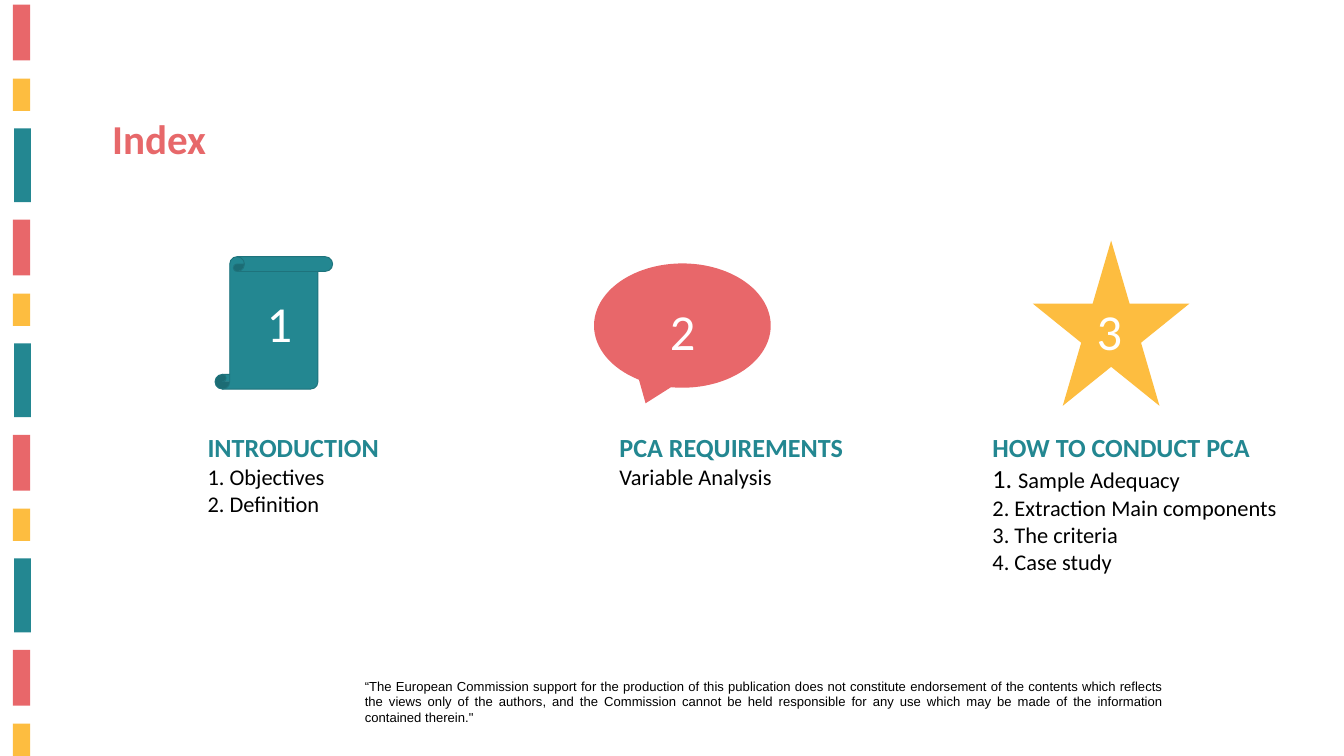
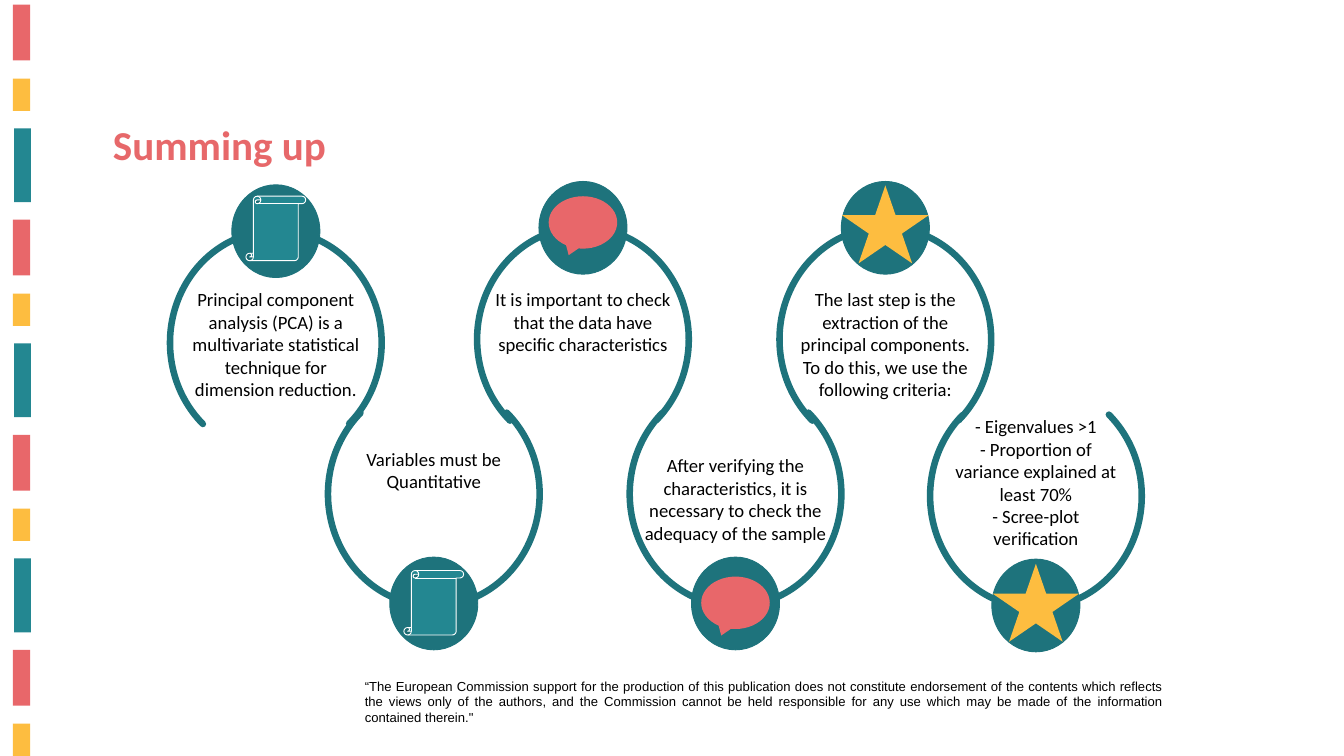
"""Build the index and summary slides of a course on principal component analysis."""
from dataclasses import dataclass
from typing import Optional

from pptx import Presentation
from pptx.dml.color import RGBColor
from pptx.enum.shapes import MSO_SHAPE as Preset
from pptx.enum.text import MSO_ANCHOR as Anchor, MSO_AUTO_SIZE as AutoSize, PP_ALIGN as Align
from pptx.oxml.ns import qn
from pptx.util import Inches, Pt

WIDTH, HEIGHT = 20, 11.25
CORAL, AMBER, TEAL, DEEP_TEAL = "E8676A", "FDBD40", "238791", "1E737C"
TITLE_CORAL, BLACK, WHITE = "E7686A", "000000", "FFFFFF"
BAND_PERIOD = 3.2
RING_WIDTH, RING_HEIGHT = 3.15, 3.34
MEDALLION_WIDTH, MEDALLION_HEIGHT = 1.31, 1.38
DISCLAIMER = (
    "“The European Commission support for the production of this publication does not "
    "constitute endorsement of the contents which reflects the views only of the authors, "
    "and the Commission cannot be held responsible for any use which may be made of the "
    "information contained therein.\""
)


@dataclass(frozen=True)
class Box:
    left: float
    top: float
    width: float
    height: float

    def lengths(self) -> tuple:
        return tuple(Inches(v) for v in (self.left, self.top, self.width, self.height))


@dataclass(frozen=True)
class Band:
    box: Box
    color: str


@dataclass(frozen=True)
class Icon:
    preset: Preset
    color: str
    width: float
    height: float
    outline: Optional[str] = None


@dataclass(frozen=True)
class Topic:
    icon: Icon
    icon_box: Box
    outline: Optional[str]
    number_box: Box
    text_box: Box
    heading: str
    items: tuple


@dataclass(frozen=True)
class Step:
    icon: Icon
    left: float
    top: float
    upper: bool
    icon_top: float
    text_top: float
    text_width: float
    text_height: float
    lines: tuple


BANDS = (
    Band(Box(0.19, 0.07, 0.26, 0.83), CORAL),
    Band(Box(0.19, 1.17, 0.26, 0.48), AMBER),
    Band(Box(0.21, 1.91, 0.25, 1.1), TEAL),
)
SCROLL = Icon(Preset.VERTICAL_SCROLL, TEAL, 0.89, 0.96, WHITE)
SPEECH = Icon(Preset.OVAL_CALLOUT, CORAL, 1.02, 0.78)
STAR = Icon(Preset.STAR_5_POINT, AMBER, 1.29, 1.16)

TOPICS = (
    Topic(SCROLL, Box(3.2, 3.82, 1.75, 1.97), DEEP_TEAL, Box(3.87, 4.3, 1.58, 1.01),
          Box(2.99, 6.37, 3.42, 2.32), "INTRODUCTION", ("1. Objectives", "2. Definition")),
    Topic(SPEECH, Box(8.84, 3.92, 2.63, 1.85), None, Box(9.87, 4.41, 1.08, 1.01),
          Box(9.12, 6.37, 4.21, 1.38), "PCA REQUIREMENTS", ("Variable Analysis",)),
    Topic(STAR, Box(15.37, 3.58, 2.33, 2.46), None, Box(16.22, 4.41, 1.5, 1.01),
          Box(14.67, 6.37, 4.55, 2.49), "HOW TO CONDUCT PCA",
          ("1. Sample Adequacy", "2. Extraction Main components",
           "3. The criteria", "4. Case study")),
)
STEPS = (
    Step(SCROLL, 2.53, 3.43, True, 2.92, 4.24, 2.9, 1.78,
         ("Principal component analysis (PCA) is a multivariate statistical technique "
          "for dimension reduction.",)),
    Step(SCROLL, 4.88, 5.68, False, 8.49, 6.61, 3.08, 0.77,
         ("Variables must be Quantitative",)),
    Step(SPEECH, 7.1, 3.38, True, 2.92, 4.24, 3.08, 1.11,
         ("It is important to check that the data have specific characteristics",)),
    Step(SPEECH, 9.37, 5.68, False, 8.58, 6.71, 2.9, 1.45,
         ("After verifying the characteristics, it is necessary to check the adequacy "
          "of the sample",)),
    Step(STAR, 11.6, 3.38, True, 2.76, 4.24, 2.75, 1.78,
         ("The last step is the extraction of the principal components. To do this, "
          "we use the following criteria:",)),
    Step(STAR, 13.84, 5.71, False, 8.39, 6.13, 2.75, 2.12,
         ("- Eigenvalues >1", "- Proportion of variance explained at least 70%",
          "- Scree-plot verification")),
)


def rgb(color: str) -> RGBColor:
    return RGBColor.from_string(color)


def style_run(run, size: float, color: str, bold: bool = False, font: str = "Calibri") -> None:
    run.font.name, run.font.size, run.font.bold = font, Pt(size), bold
    run.font.color.rgb = rgb(color)


def prepare_frame(frame) -> None:
    frame.word_wrap, frame.auto_size = True, AutoSize.NONE
    frame.vertical_anchor = Anchor.TOP
    frame.margin_left = frame.margin_right = Inches(0.1)
    frame.margin_top = frame.margin_bottom = Inches(0.05)


def add_text(slide, box: Box, lines: tuple, size: float, color: str = BLACK,
             align: Align = Align.LEFT, font: str = "Calibri"):
    frame = slide.shapes.add_textbox(*box.lengths()).text_frame
    prepare_frame(frame)
    frame.text = "\n".join(lines)
    for paragraph in frame.paragraphs:
        paragraph.alignment = align
        for run in paragraph.runs:
            style_run(run, size, color, font=font)
    return frame


def add_preset(slide, preset: Preset, box: Box, fill: Optional[str],
               outline: Optional[str] = None, weight: float = 1):
    shape = slide.shapes.add_shape(preset, *box.lengths())
    shape.shadow.inherit = False
    if fill:
        shape.fill.solid()
        shape.fill.fore_color.rgb = rgb(fill)
    else:
        shape.fill.background()
    if outline:
        shape.line.color.rgb = rgb(outline)
        shape.line.width = Pt(weight)
    else:
        shape.line.fill.background()
    return shape


def set_title(slide, text: str, box: Box) -> None:
    title = slide.shapes.title
    title.left, title.top, title.width, title.height = box.lengths()
    prepare_frame(title.text_frame)
    title.text_frame.text = text
    paragraph = title.text_frame.paragraphs[0]
    paragraph.alignment = Align.LEFT
    style_run(paragraph.runs[0], 44, TITLE_CORAL, bold=True)


def decorate_layout(layout, slide) -> None:
    for placeholder in list(layout.placeholders):
        if placeholder.placeholder_format.idx:
            layout.shapes.element.remove(placeholder.element)
    for cycle in range(4):
        for band in BANDS:
            top = band.box.top + cycle * BAND_PERIOD
            if top < HEIGHT:
                height = min(band.box.height, HEIGHT - top)
                add_preset(slide, Preset.RECTANGLE,
                           Box(band.box.left, top, band.box.width, height), band.color)
    add_text(slide, Box(5.33, 10.04, 12.08, 0.81), (DISCLAIMER,), 14,
             align=Align.JUSTIFY, font="Arial")
    for shape in list(slide.shapes):
        if not shape.is_placeholder:
            layout.shapes.element.append(shape.element)


def draw_topic(slide, number: int, topic: Topic) -> None:
    add_preset(slide, topic.icon.preset, topic.icon_box, topic.icon.color, topic.outline)
    add_text(slide, topic.number_box, (str(number),), 54, WHITE)
    frame = add_text(slide, topic.text_box, (topic.heading, *topic.items), 24)
    style_run(frame.paragraphs[0].runs[0], 28, TEAL, bold=True)
    if topic.icon is STAR:
        first_item = frame.paragraphs[1]
        marker, label = topic.items[0].split(" ", 1)
        first_item.runs[0].text = marker + " "
        style_run(first_item.runs[0], 28, BLACK)
        label_run = first_item.add_run()
        label_run.text = label
        style_run(label_run, 24, BLACK)


def draw_step(slide, step: Step) -> None:
    center = step.left + RING_WIDTH / 2
    ring = add_preset(slide, Preset.ARC, Box(step.left, step.top, RING_WIDTH, RING_HEIGHT),
                      None, DEEP_TEAL, 7)
    ring.adjustments[0], ring.adjustments[1] = 79.141, 28.684
    ring.rotation = 0 if step.upper else 180
    ring.element.spPr.find(qn("a:ln")).set("cap", "rnd")
    medallion_top = step.top + (-0.68 if step.upper else 2.61)
    add_preset(slide, Preset.OVAL,
               Box(center - MEDALLION_WIDTH / 2, medallion_top,
                   MEDALLION_WIDTH, MEDALLION_HEIGHT), DEEP_TEAL, DEEP_TEAL)
    icon = step.icon
    add_preset(slide, icon.preset,
               Box(center - icon.width / 2, step.icon_top, icon.width, icon.height),
               icon.color, icon.outline)
    add_text(slide, Box(center - step.text_width / 2, step.text_top,
                        step.text_width, step.text_height),
             step.lines, 20, align=Align.CENTER)


def main() -> None:
    deck = Presentation()
    deck.slide_width, deck.slide_height = Inches(WIDTH), Inches(HEIGHT)
    layout = deck.slide_layouts.get_by_name("Title Only")

    index = deck.slides.add_slide(layout)
    decorate_layout(layout, index)
    set_title(index, "Index", Box(1.57, 1.64, 6.77, 1.58))
    for number, topic in enumerate(TOPICS, start=1):
        draw_topic(index, number, topic)

    summary = deck.slides.add_slide(layout)
    set_title(summary, "Summing up", Box(1.58, 1.72, 6.58, 0.84))
    for step in STEPS:
        draw_step(summary, step)

    deck.save("out.pptx")


if __name__ == "__main__":
    main()
